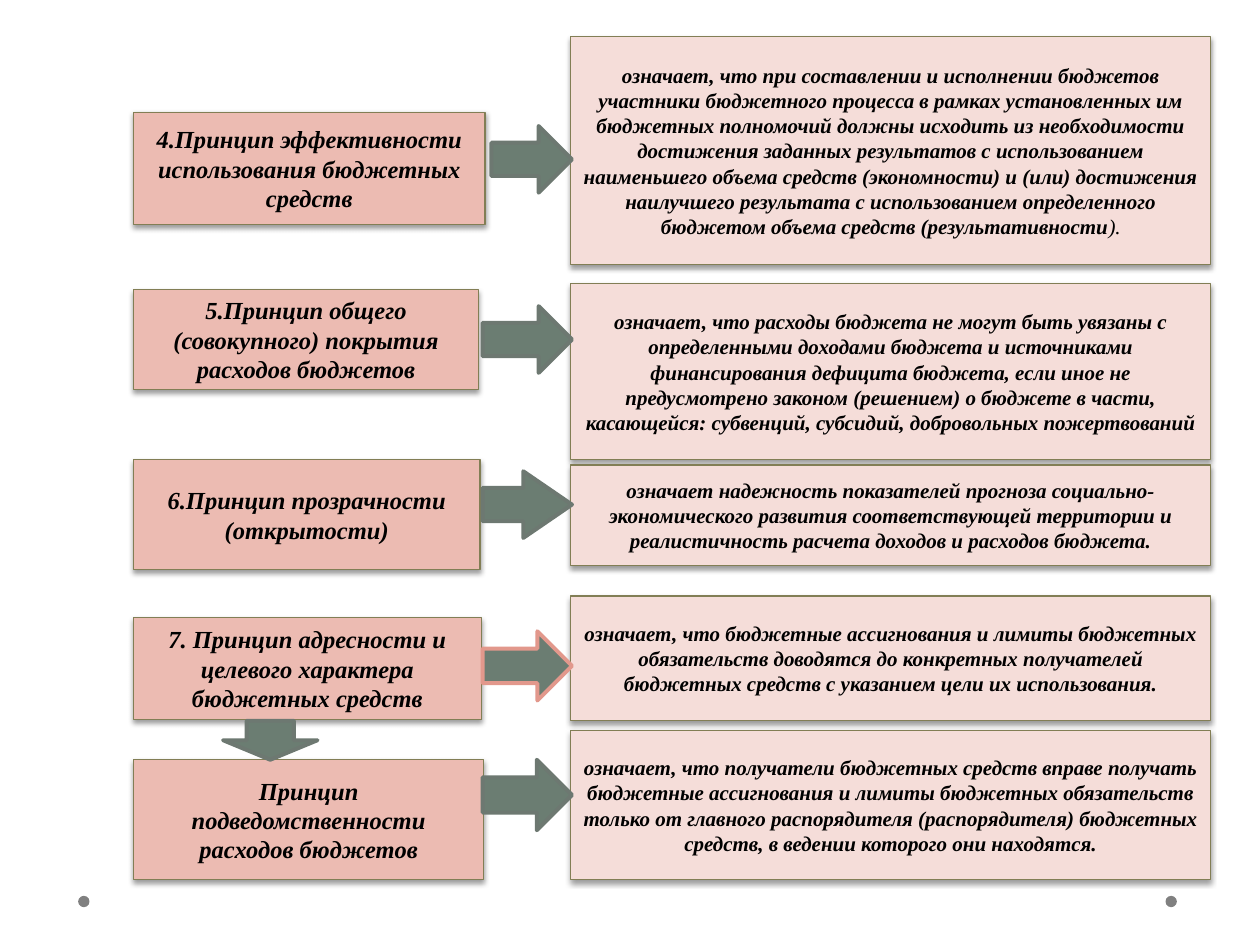
from lxml.etree import SubElement
from pptx import Presentation
from pptx.dml.color import RGBColor
from pptx.enum.shapes import MSO_SHAPE as SHAPE
from pptx.enum.text import MSO_ANCHOR as ANCHOR, PP_ALIGN as ALIGN
from pptx.oxml.ns import qn
from pptx.util import Inches, Pt

BLACK = RGBColor(0x00, 0x00, 0x00)
GRAY = RGBColor(0x80, 0x80, 0x80)
ROSE = RGBColor(0xEC, 0xBB, 0xB2)
PALE_ROSE = RGBColor(0xF5, 0xDD, 0xD9)
OLIVE = RGBColor(0x82, 0x7E, 0x55)
GREEN = RGBColor(0x6B, 0x7D, 0x72)
GREEN_EDGE = RGBColor(0x6D, 0x78, 0x71)
CORAL = RGBColor(0xE2, 0x98, 0x8C)

# Columns of the grid, in inches
NAME_LEFT, MEANING_LEFT, MEANING_WIDTH = 1.06, 4.53, 5.08
ARROW_LEFT = 3.83

FONT = {"name": "Times New Roman", "bold": True, "italic": True}

# Each row: principle (text, top, width, height), meaning (text, top, height),
# arrow (left, top, height, edge colour, head share)
ROWS = [
    (("4.Принцип эффективности использования бюджетных средств", 0.89, 2.79, 0.89),
     ("означает, что при составлении и исполнении бюджетов участники бюджетного "
      "процесса в рамках установленных им бюджетных полномочий должны исходить из "
      "необходимости достижения заданных результатов с использованием наименьшего "
      "объема средств (экономности) и (или) достижения наилучшего результата с "
      "использованием определенного бюджетом объема средств (результативности",
      0.29, 1.81),
     (3.9, 1, 0.53, GREEN_EDGE, 0.5)),
    (("5.Принцип общего (совокупного) покрытия расходов бюджетов", 2.3, 2.74, 0.79),
     ("означает, что расходы бюджета не могут быть увязаны с определенными доходами "
      "бюджета и источниками финансирования дефицита бюджета, если иное не "
      "предусмотрено законом (решением) о бюджете в части, касающейся: субвенций, "
      "субсидий, добровольных пожертвований", 2.25, 1.4),
     (ARROW_LEFT, 2.43, 0.53, GREEN_EDGE, 0.5)),
    (("6.Принцип прозрачности (открытости)", 3.65, 2.75, 0.87),
     ("означает надежность показателей прогноза социально-экономического развития "
      "соответствующей территории и реалистичность расчета доходов и расходов "
      "бюджета.", 3.69, 0.8),
     (ARROW_LEFT, 3.74, 0.53, GREEN_EDGE, 0.73)),
    (("7. Принцип адресности и целевого характера бюджетных средств", 4.9, 2.76, 0.81),
     ("означает, что бюджетные ассигнования и лимиты бюджетных обязательств "
      "доводятся до конкретных получателей бюджетных средств с указанием цели их "
      "использования.", 4.73, 0.99),
     (ARROW_LEFT, 5.01, 0.55, CORAL, 0.5)),
    (("Принцип подведомственности расходов бюджетов", 6.03, 2.78, 0.95),
     ("означает, что получатели бюджетных средств вправе получать бюджетные "
      "ассигнования и лимиты бюджетных обязательств только от главного "
      "распорядителя (распорядителя) бюджетных средств, в ведении которого они "
      "находятся.", 5.8, 1.18),
     (ARROW_LEFT, 6.03, 0.56, GREEN_EDGE, 0.5)),
]


def add_shape(slide, kind, box, fill, line=None, width=0.75):
    sp = slide.shapes.add_shape(kind, *(Inches(v) for v in box))
    sp.shadow.inherit = False
    sp.fill.solid()
    sp.fill.fore_color.rgb = fill
    if line is None:
        sp.line.fill.background()
    else:
        sp.line.color.rgb = line
        sp.line.width = Pt(width)
    return sp


def add_shadow(sp):
    effects = sp.element.spPr.find(qn("a:effectLst"))
    shadow = SubElement(effects, qn("a:outerShdw"), blurRad=str(Pt(3.1)),
                        dist=str(Pt(1.6)), dir="5400000", rotWithShape="0")
    color = SubElement(shadow, qn("a:srgbClr"), val=str(BLACK))
    SubElement(color, qn("a:alpha"), val="38000")


def add_run(p, text, size, **changes):
    r = p.add_run()
    r.text = text
    r.font.size = Pt(size)
    r.font.color.rgb = BLACK
    for key, value in {**FONT, **changes}.items():
        setattr(r.font, key, value)


def add_card(slide, box, fill, text, size):
    sp = add_shape(slide, SHAPE.RECTANGLE, box, fill, OLIVE)
    add_shadow(sp)
    tf = sp.text_frame
    tf.word_wrap = True
    tf.vertical_anchor = ANCHOR.MIDDLE
    p = tf.paragraphs[0]
    p.alignment = ALIGN.CENTER
    add_run(p, text, size)
    return p


def add_arrow(slide, kind, box, edge=GREEN_EDGE, head=0.5):
    sp = add_shape(slide, kind, box, GREEN, edge, 2.25)
    sp.adjustments[1] = head


def main():
    prs = Presentation()
    prs.slide_width, prs.slide_height = Inches(10), Inches(7.5)
    slide = prs.slides.add_slide(prs.slide_layouts[6])

    # Footer dots
    for left in (0.62, 9.25):
        add_shape(slide, SHAPE.OVAL, (left, 7.11, 0.09, 0.09), GRAY)

    # Principles and their meanings
    meanings = []
    for (name, top, width, height), (meaning, m_top, m_height), _ in ROWS:
        add_card(slide, (NAME_LEFT, top, width, height), ROSE, name, 14)
        box = (MEANING_LEFT, m_top, MEANING_WIDTH, m_height)
        meanings.append(add_card(slide, box, PALE_ROSE, meaning, 12))
    add_run(meanings[0], ").", 12, bold=False)

    # Arrows
    for _, _, (left, top, height, edge, head) in ROWS:
        box = (left, top, MEANING_LEFT + 0.01 - left, height)
        add_arrow(slide, SHAPE.RIGHT_ARROW, box, edge, head)
    add_arrow(slide, SHAPE.DOWN_ARROW, (1.77, 5.72, 0.75, 0.31))

    prs.save("out.pptx")


if __name__ == "__main__":
    main()
